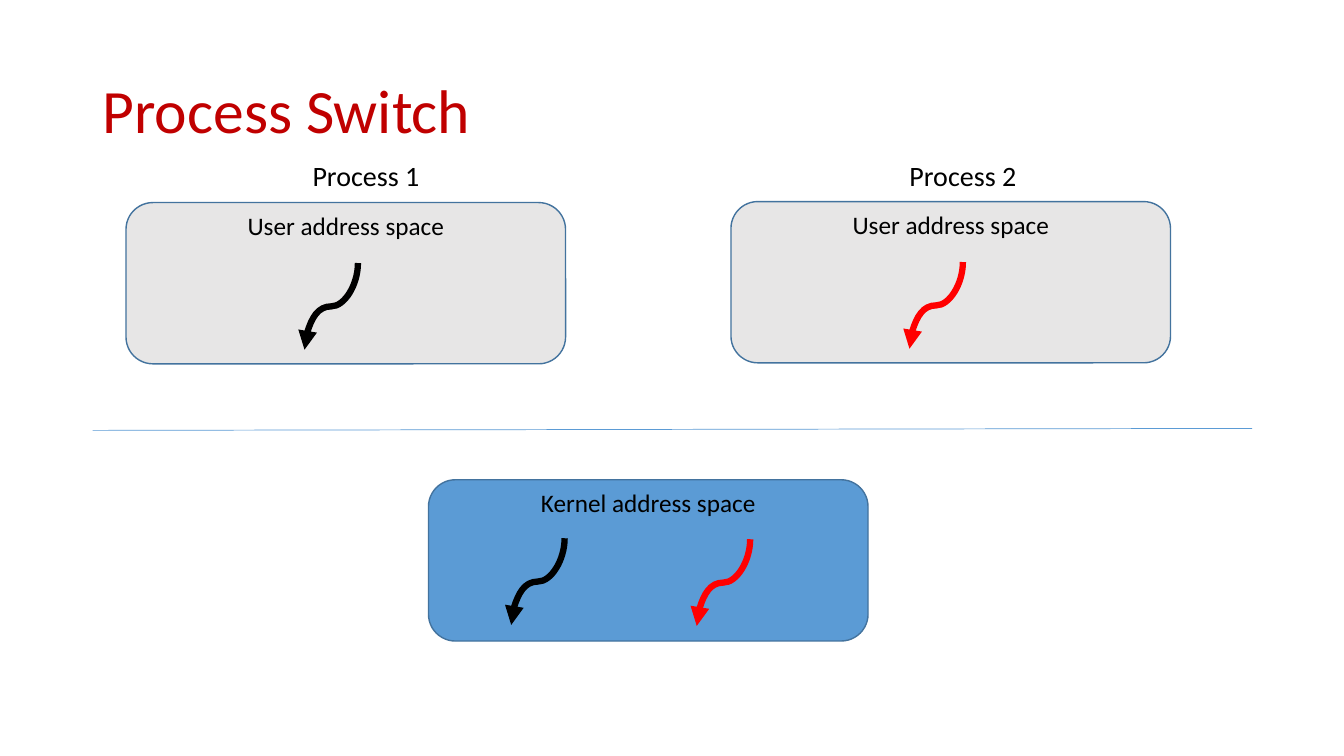
from lxml import etree
from pptx import Presentation
from pptx.dml.color import RGBColor
from pptx.enum.shapes import MSO_CONNECTOR, MSO_SHAPE
from pptx.enum.text import MSO_ANCHOR, PP_ALIGN
from pptx.oxml.ns import qn
from pptx.util import Inches, Pt

STRAIGHT, CURVE = MSO_CONNECTOR.STRAIGHT, MSO_CONNECTOR.CURVE
ROUND = MSO_SHAPE.ROUNDED_RECTANGLE
LEFT, CENTER = PP_ALIGN.LEFT, PP_ALIGN.CENTER
TOP, MIDDLE = MSO_ANCHOR.TOP, MSO_ANCHOR.MIDDLE


class Theme:
    font = "Calibri"
    title, head, body = 44, 20, 18
    red, black, thread = "C00000", "000000", "FF0000"
    user, kernel, edge, rule = "E7E6E6", "5B9BD5", "43739E", "5B9BD5"


# Content: label, left, top, fill
SPACES = [
    ("User address space", 1.25, 2.01, Theme.user),
    ("User address space", 7.25, 2.0, Theme.user),
    ("Kernel address space", 4.25, 4.76, Theme.kernel),
]
# Thread start (x, y) and colour
THREADS = [
    (3.55, 2.61, Theme.black),
    (9.55, 2.6, Theme.thread),
    (5.6, 5.34, Theme.black),
    (7.44, 5.35, Theme.thread),
]
HEADS = [("Process 1", 2.22), ("Process 2", 8.14)]

SPACE_W, SPACE_H = 4.36, 1.6
LABEL_W, LABEL_H = 2.77, 0.4
DROP, SHIFT = 0.86, 0.53

deck = Presentation()
deck.slide_width, deck.slide_height = Inches(13.33), Inches(7.5)
slide = deck.slides.add_slide(deck.slide_layouts[6])
shapes = slide.shapes


def add_text(text, x, y, w, h, size=Theme.body, color=Theme.black,
             align=CENTER, anchor=TOP, spacing=None):
    box = shapes.add_textbox(Inches(x), Inches(y), Inches(w), Inches(h))
    frame = box.text_frame
    frame.word_wrap = True
    frame.vertical_anchor = anchor
    para = frame.paragraphs[0]
    para.alignment = align
    para.line_spacing = spacing
    run = para.add_run()
    run.text = text
    run.font.name, run.font.size = Theme.font, Pt(size)
    run.font.color.rgb = RGBColor.from_string(color)


def add_line(kind, x1, y1, x2, y2, color, width):
    line = shapes.add_connector(kind, Inches(x1), Inches(y1), Inches(x2), Inches(y2))
    line.line.color.rgb = RGBColor.from_string(color)
    line.line.width = Pt(width)
    etree.SubElement(line._element.spPr, qn("a:effectLst"))
    return line


def add_space(label, x, y, fill):
    box = shapes.add_shape(ROUND, Inches(x), Inches(y), Inches(SPACE_W), Inches(SPACE_H))
    box.shadow.inherit = False
    box.fill.solid()
    box.fill.fore_color.rgb = RGBColor.from_string(fill)
    box.line.color.rgb = RGBColor.from_string(Theme.edge)
    box.line.width = Pt(1)
    add_text(label, x + (SPACE_W - LABEL_W) / 2, y + 0.03, LABEL_W, LABEL_H)


def add_thread(x, y, color):
    """Draw a curved arrow down and left from (x, y), turned a quarter."""
    left = x - (SHIFT + DROP) / 2
    top = y + (DROP - SHIFT) / 2
    line = add_line(CURVE, left, top, left + DROP, top + SHIFT, color, 4.5)
    props = line._element.spPr
    props.find(qn("a:xfrm")).set("rot", "5400000")
    etree.SubElement(props.find(qn("a:ln")), qn("a:tailEnd"), type="triangle")


add_text("Process Switch", 0.92, 0.4, 11.5, 1.45, size=Theme.title,
         color=Theme.red, align=LEFT, anchor=MIDDLE, spacing=0.9)
add_line(STRAIGHT, 0.92, 4.27, 12.42, 4.25, Theme.rule, 0.5)
for space in SPACES:
    add_space(*space)
for thread in THREADS:
    add_thread(*thread)
for name, x in HEADS:
    add_text(name, x, 1.52, 2.82, 0.44, size=Theme.head)

deck.save("out.pptx")
